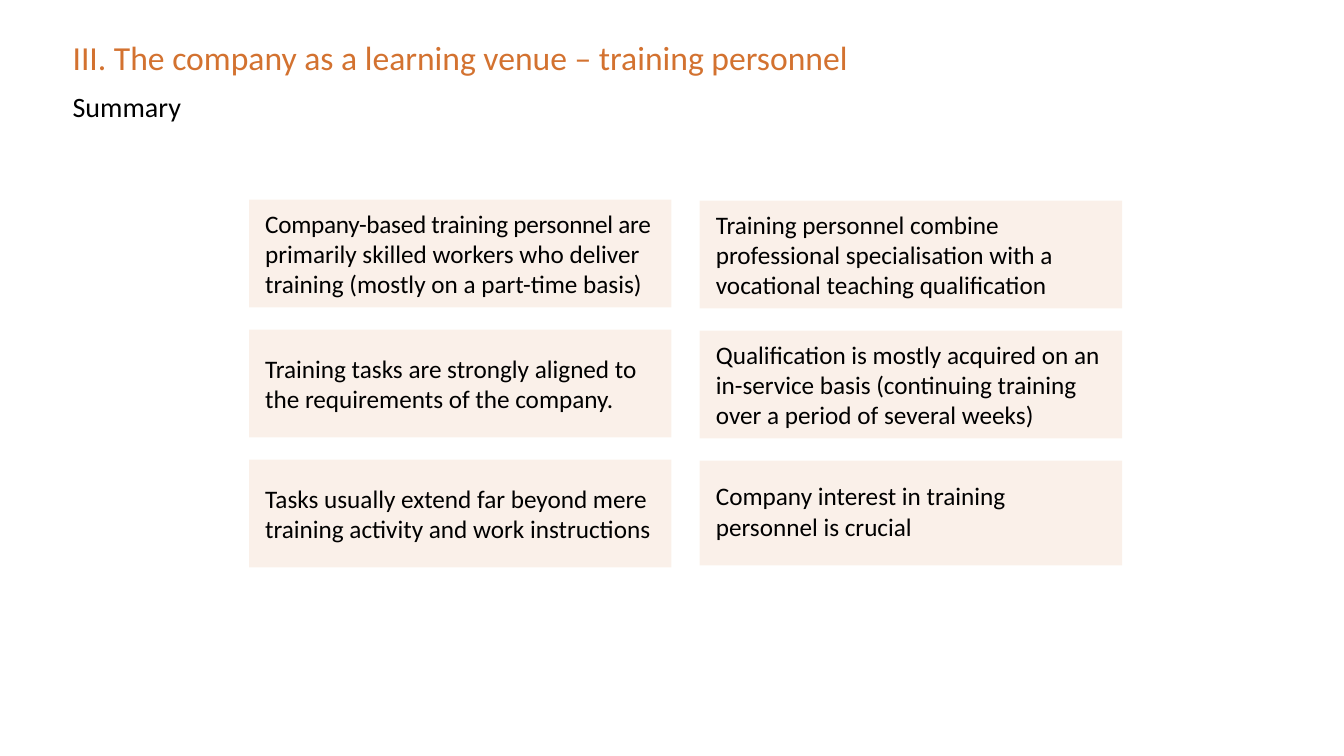
from pptx import Presentation
from pptx import util as u
from pptx.dml.color import RGBColor
from pptx.enum import shapes, text
from pptx.oxml.ns import qn
from lxml import etree

PX = 9144  # 100 px to the inch


def px(n):
    return u.Emu(n * PX)


def rgb(code):
    return RGBColor.from_string(code)


class Deck:
    font = "Calibri"
    accent = "D37230"
    ink = "000000"

    def __init__(self, wide, high):
        self.prs = Presentation()
        self.prs.slide_width, self.prs.slide_height = px(wide), px(high)
        self.slide = self.prs.slides.add_slide(self.prs.slide_layouts[6])

    def put_text(self, frame, parts, size=18, color=ink, pads=(0, 0, 0, 0),
                 anchor=text.MSO_ANCHOR.TOP):
        """Fill a frame with (words, spacing) runs; pads go left, top, right, bottom."""
        frame.word_wrap = True
        frame.vertical_anchor = anchor
        (frame.margin_left, frame.margin_top,
         frame.margin_right, frame.margin_bottom) = map(px, pads)
        par = frame.paragraphs[0]
        par.alignment = text.PP_ALIGN.LEFT
        for words, gap in parts:
            run = par.add_run()
            run.text = words
            run.font.name = self.font
            run.font.size = u.Pt(size)
            run.font.color.rgb = rgb(color)
            if gap:
                run._r.get_or_add_rPr().set("spc", str(gap))

    def label(self, box, words, **style):
        item = self.slide.shapes.add_textbox(*map(px, box))
        self.put_text(item.text_frame, [(words, 0)], **style)

    def card(self, box, parts, pads):
        item = self.slide.shapes.add_shape(
            shapes.MSO_SHAPE.RECTANGLE, *map(px, box))
        item.shadow.inherit = False
        item.line.fill.background()
        item.fill.solid()
        item.fill.fore_color.rgb = rgb(self.accent)
        tint = item._element.spPr.find(qn("a:solidFill"))[0]
        etree.SubElement(tint, qn("a:alpha")).set("val", "10000")
        self.put_text(item.text_frame, parts, pads=pads,
                      anchor=text.MSO_ANCHOR.MIDDLE)


PADS = (16, 8, 16, 8)
LEFT = [
    [("Company-based training personnel are ", -20),
     ("primarily skilled workers who deliver training "
      "(mostly on a part-time basis)", 0)],
    [("Training tasks are strongly aligned to the requirements "
      "of the company.", 0)],
    [("Tasks usually extend far beyond mere training activity "
      "and work instructions", 0)],
]
RIGHT = [
    [("Training personnel combine professional specialisation "
      "with a vocational teaching qualification", 0)],
    [("Qualification is mostly acquired on an in-service basis "
      "(continuing training over a period of several weeks)", 0)],
    [("Company interest in training personnel is crucial", 0)],
]


def main():
    deck = Deck(1333, 750)
    deck.label((72, 32, 984, 49),
               "III. The company as a learning venue – training personnel",
               size=24, color=deck.accent, anchor=text.MSO_ANCHOR.MIDDLE)
    deck.label((72, 89, 1209, 49), "Summary", size=20)
    for x, top, cards in ((247, 198, LEFT), (694, 199, RIGHT)):
        for row, parts in enumerate(cards):
            last = cards is RIGHT and row == 2
            deck.card((x, top + 129 * row, 419, 104 if last else 107), parts,
                      (16, 20, 16, 24) if last else PADS)
    deck.prs.save("out.pptx")


if __name__ == "__main__":
    main()
